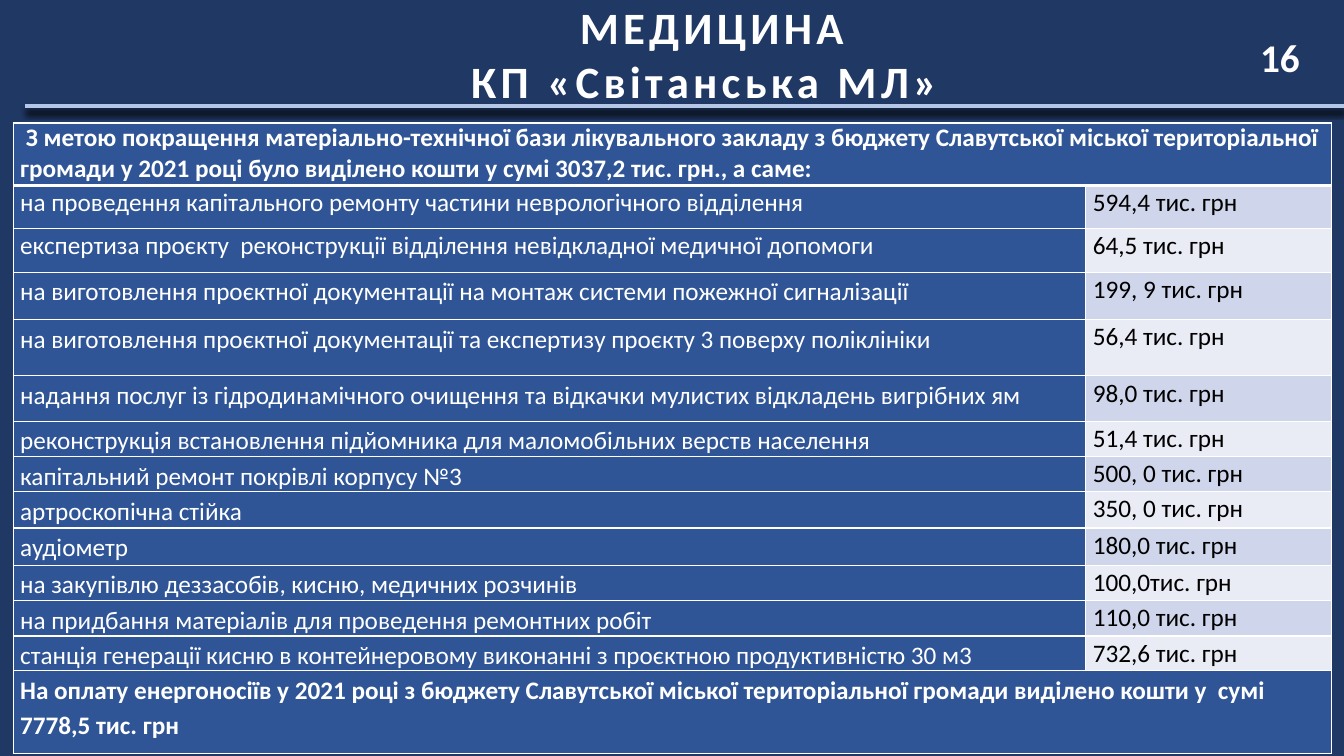
from lxml import etree
from pptx import Presentation
from pptx.dml.color import RGBColor
from pptx.enum.shapes import MSO_CONNECTOR
from pptx.enum.text import MSO_ANCHOR, PP_ALIGN
from pptx.oxml.ns import qn
from pptx.util import Pt

STRAIGHT = MSO_CONNECTOR.STRAIGHT
TOP = MSO_ANCHOR.TOP
LEFT, CENTER = PP_ALIGN.LEFT, PP_ALIGN.CENTER

EMU_PER_PX = 9144  # 100 px to the inch
FONT = "Calibri"
NAVY, BLUE, SKY = "203864", "2F5597", "B4C7E7"
WHITE, BLACK = "FFFFFF", "000000"
BANDS = ["CFD5EA", "E9EBF5"]

TITLE = ["МЕДИЦИНА", "КП «Світанська МЛ» "]
HEADER = (" З метою покращення матеріально-технічної бази лікувального закладу з бюджету "
          "Славутської міської територіальної громади у 2021 році було виділено кошти "
          "у сумі 3037,2 тис. грн., а саме:")
EXPENSES = [
    ("на проведення капітального ремонту частини неврологічного відділення", "594,4 тис. грн"),
    ("експертиза проєкту  реконструкції відділення невідкладної медичної допомоги", "64,5 тис. грн"),
    ("на виготовлення проєктної документації на монтаж системи пожежної сигналізації", "199, 9 тис. грн"),
    ("на виготовлення проєктної документації та експертизу проєкту 3 поверху поліклініки", "56,4 тис. грн"),
    ("надання послуг із гідродинамічного очищення та відкачки мулистих відкладень вигрібних ям", "98,0 тис. грн"),
    ("реконструкція встановлення підйомника для маломобільних верств населення", "51,4 тис. грн"),
    ("капітальний ремонт покрівлі корпусу №3", "500, 0 тис. грн"),
    ("артроскопічна стійка", "350, 0 тис. грн"),
    ("аудіометр", "180,0 тис. грн"),
    ("на закупівлю деззасобів, кисню, медичних розчинів", "100,0тис. грн"),
    ("на придбання матеріалів для проведення ремонтних робіт", "110,0 тис. грн"),
    ("станція генерації кисню в контейнеровому виконанні з проєктною продуктивністю 30 м3", "732,6 тис. грн"),
]
FOOTER = ("На оплату енергоносіїв у 2021 році з бюджету Славутської міської територіальної "
          "громади виділено кошти у  сумі 7778,5 тис. грн")
COLUMN_WIDTHS = [1064, 244]
ROW_HEIGHTS = [62, 43, 43, 47, 56, 45, 35, 35, 36, 37, 35, 35, 34, 82]


def px(length):
    return length * EMU_PER_PX


def color(value):
    return RGBColor.from_string(value)


def add_span(para, text, size, ink=WHITE, bold=False):
    span = para.add_run()
    span.text = text
    span.font.name = FONT
    span.font.size = Pt(size)
    span.font.bold = bold
    span.font.color.rgb = color(ink)
    return span


def add_shadow(properties, blur, distance, angle, opacity):
    effects = etree.SubElement(properties, qn("a:effectLst"))
    shadow = etree.SubElement(effects, qn("a:outerShdw"), blurRad=str(Pt(blur)),
                              dist=str(Pt(distance)), dir=str(angle * 60000))
    tint = etree.SubElement(shadow, qn("a:srgbClr"), val=BLACK)
    etree.SubElement(tint, qn("a:alpha"), val=str(opacity * 1000))
    return effects


def fill_title(title, lines):
    title.left, title.top, title.width, title.height = px(25), px(-5), px(1362), px(118)
    frame = title.text_frame
    frame.vertical_anchor = TOP
    for index, line in enumerate(lines):
        para = frame.paragraphs[0] if index == 0 else frame.add_paragraph()
        para.alignment = CENTER
        properties = add_span(para, line, 32, bold=True).font._element
        properties.set("spc", "300")
        effects = add_shadow(properties, 3, 3, 45, 50)
        properties.find(qn("a:solidFill")).addnext(effects)


def add_rule(slide, left, right, y):
    rule = slide.shapes.add_connector(STRAIGHT, px(left), px(y), px(right), px(y))
    rule.line.color.rgb = color(SKY)
    rule.line.width = Pt(3)
    add_shadow(rule._element.spPr, 4, 4, 90, 100)


def add_page_number(slide, text):
    box = slide.shapes.add_textbox(px(1240), px(28), px(68), px(57))
    box.text_frame.word_wrap = True
    add_span(box.text_frame.paragraphs[0], text, 28, bold=True)


def set_borders(cell, top=1, bottom=1):
    properties = cell._tc.get_or_add_tcPr()
    for side, width in (("L", 1), ("R", 1), ("T", top), ("B", bottom)):
        line = etree.SubElement(properties, qn(f"a:ln{side}"), w=str(Pt(width)))
        fill = etree.SubElement(line, qn("a:solidFill"))
        etree.SubElement(fill, qn("a:srgbClr"), val=WHITE)


def style_cell(cell, fill, top=1, bottom=1):
    set_borders(cell, top, bottom)
    cell.fill.solid()
    cell.fill.fore_color.rgb = color(fill)
    cell.margin_left = cell.margin_right = px(7)
    cell.margin_top = cell.margin_bottom = 0
    cell.vertical_anchor = TOP


def write_cell(cell, text, ink=WHITE, bold=False, spacing=1.0, after=0):
    para = cell.text_frame.paragraphs[0]
    para.alignment = LEFT
    para.line_spacing = spacing
    para.space_after = Pt(after)
    add_span(para, text, 18, ink, bold)


def add_expense_table(slide):
    frame = slide.shapes.add_table(len(ROW_HEIGHTS), len(COLUMN_WIDTHS), px(13), px(122),
                                   px(sum(COLUMN_WIDTHS)), px(sum(ROW_HEIGHTS)))
    table = frame.table
    table.first_row = table.horz_banding = False
    for column, width in zip(table.columns, COLUMN_WIDTHS):
        column.width = px(width)
    for row, height in zip(table.rows, ROW_HEIGHTS):
        row.height = px(height)

    # Full-width first and last rows
    last = len(ROW_HEIGHTS) - 1
    for row in (0, last):
        for column in range(2):
            style_cell(table.cell(row, column), BLUE, bottom=3 if row == 0 else 1)
        table.cell(row, 0).merge(table.cell(row, 1))
    write_cell(table.cell(0, 0), HEADER, bold=True)
    write_cell(table.cell(last, 0), FOOTER, bold=True, spacing=1.15, after=10)

    # Purpose and sum of each expense
    for row, (purpose, amount) in enumerate(EXPENSES, start=1):
        top = 3 if row == 1 else 1
        spacing, after = (1.07, 8) if row <= 2 else (1.15, 10)
        style_cell(table.cell(row, 0), BLUE, top)
        write_cell(table.cell(row, 0), purpose, spacing=spacing, after=after)
        style_cell(table.cell(row, 1), BANDS[(row - 1) % 2], top)
        write_cell(table.cell(row, 1), amount, BLACK, spacing=1.07, after=8)


def main():
    deck = Presentation()
    deck.slide_width, deck.slide_height = px(1333), px(750)
    page = deck.slides.add_slide(deck.slide_layouts[5])
    page.background.fill.solid()
    page.background.fill.fore_color.rgb = color(NAVY)

    # Heading
    fill_title(page.shapes.title, TITLE)
    add_rule(page, 25, 1333, 105)
    add_page_number(page, "16")

    # Expenses
    add_expense_table(page)
    deck.save("out.pptx")


if __name__ == "__main__":
    main()
